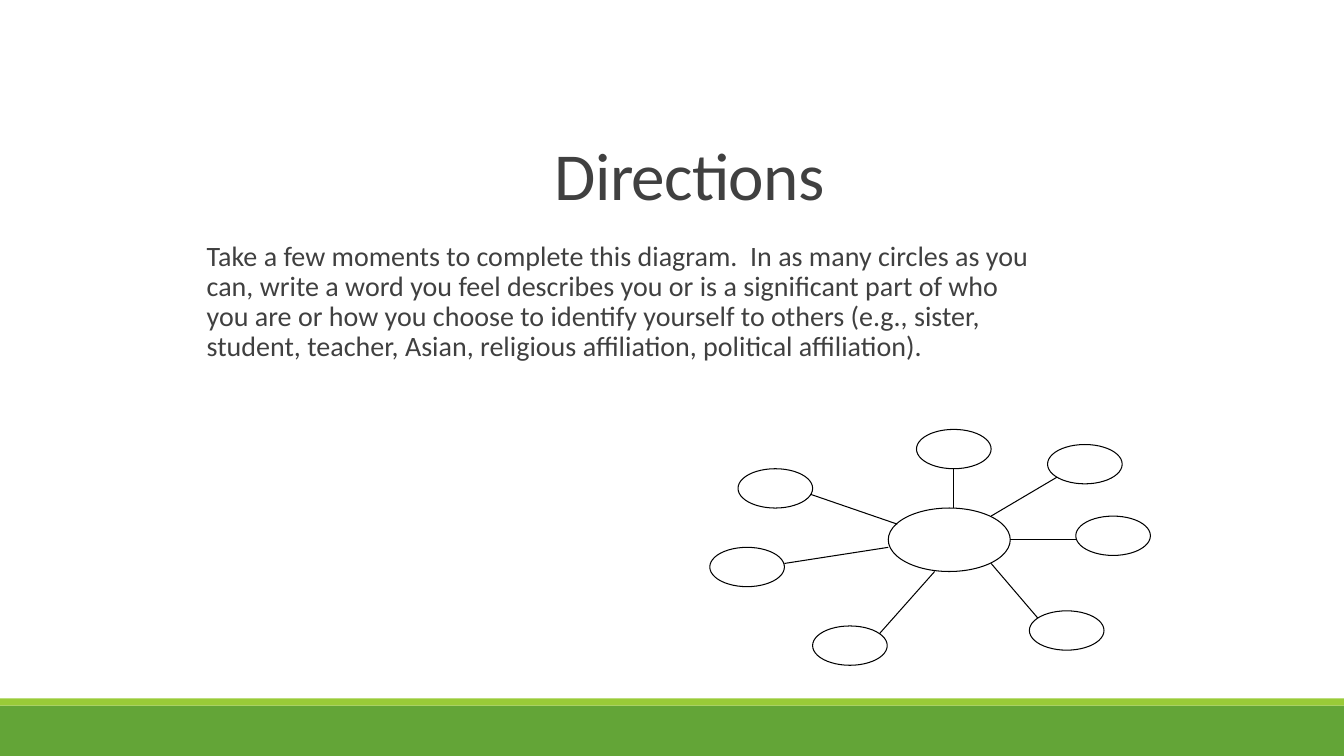
from lxml import etree
from pptx import Presentation
from pptx.dml.color import RGBColor
from pptx.enum import shapes, text
from pptx.oxml import ns
from pptx.util import Inches, Pt

WHITE = RGBColor(0xFF, 0xFF, 0xFF)
BLACK = RGBColor(0x00, 0x00, 0x00)
GRAY = RGBColor(0x40, 0x40, 0x40)
GREEN = RGBColor(0x63, 0xA5, 0x37)
LIME = RGBColor(0x99, 0xCB, 0x38)

HEADING = "Directions"
INSTRUCTIONS = (
    "Take a few moments to complete this diagram.  In as many circles as you can, "
    "write a word you feel describes you or is a significant part of who you are or "
    "how you choose to identify yourself to others (e.g., sister, student, teacher, "
    "Asian, religious affiliation, political affiliation)."
)
BANDS = [((0, 7, 13.33, 0.5), GREEN), ((0, 6.93, 13.33, 0.07), LIME)]
HUB = (8.81, 5.04, 1.21, 0.63)
CIRCLE_SIZE = (0.74, 0.39)
SPOKES = [
    {"circle": (7.32, 4.65), "start": (8.9, 5.2), "end": (7.97, 4.88)},
    {"circle": (9.09, 4.26), "start": (9.46, 5.04), "end": (9.46, 4.57)},
    {"circle": (10.39, 4.41), "start": (9.83, 5.12), "end": (10.49, 4.73)},
    {"circle": (10.67, 5.12), "start": (10.02, 5.35), "end": (10.67, 5.35)},
    {"circle": (10.21, 6.06), "start": (9.83, 5.59), "end": (10.3, 6.14)},
    {"circle": (8.06, 6.21), "start": (9.27, 5.67), "end": (8.72, 6.29)},
    {"circle": (7.04, 5.43), "start": (8.81, 5.43), "end": (7.78, 5.59)},
]


def add_filled(slide, preset, box, fill, outline=None):
    """Add a flat preset shape with an optional thin outline."""
    shape = slide.shapes.add_shape(preset, *map(Inches, box))
    shape.shadow.inherit = False
    shape.fill.solid()
    shape.fill.fore_color.rgb = fill
    if outline is None:
        shape.line.fill.background()
    else:
        shape.line.color.rgb = outline
        shape.line.width = Pt(0.75)


def add_spoke(slide, start, end):
    """Add a thin straight line between two points."""
    spoke = slide.shapes.add_connector(
        shapes.MSO_CONNECTOR.STRAIGHT, *map(Inches, start + end))
    spoke.line.color.rgb = BLACK
    spoke.line.width = Pt(0.75)
    etree.SubElement(spoke._element.spPr, ns.qn("a:effectLst"))


def fill_placeholder(placeholder, box, words, size, anchor, align, spacing):
    """Place a placeholder, write its words and return the paragraph and run."""
    placeholder.left, placeholder.top, placeholder.width, placeholder.height = map(Inches, box)
    frame = placeholder.text_frame
    frame.word_wrap = True
    frame.auto_size = text.MSO_AUTO_SIZE.NONE
    frame.vertical_anchor = anchor
    paragraph = frame.paragraphs[0]
    paragraph.alignment = align
    paragraph.line_spacing = spacing
    run = paragraph.add_run()
    run.text = words
    run.font.size = Pt(size)
    run.font.name = "Calibri"
    run.font.color.rgb = GRAY
    return paragraph, run


def main():
    """Build the directions slide and save it."""
    deck = Presentation()
    deck.slide_width, deck.slide_height = Inches(13.33), Inches(7.5)
    slide = deck.slides.add_slide(deck.slide_layouts[1])
    heading, instructions = slide.placeholders

    for box, color in BANDS:
        add_filled(slide, shapes.MSO_SHAPE.RECTANGLE, box, color)

    _, heading_run = fill_placeholder(
        heading, (3.61, 1.05, 6.46, 1.13), HEADING, 48,
        text.MSO_ANCHOR.BOTTOM, text.PP_ALIGN.CENTER, 0.85)
    heading_run.font._element.set("spc", "-50")

    paragraph, _ = fill_placeholder(
        instructions, (1.95, 2.35, 8.41, 2.09), INSTRUCTIONS, 20,
        text.MSO_ANCHOR.TOP, text.PP_ALIGN.LEFT, 0.9)
    instructions.text_frame.margin_left = instructions.text_frame.margin_right = 0
    paragraph.space_before, paragraph.space_after = Pt(12), Pt(2)
    properties = paragraph._p.get_or_add_pPr()
    properties.set("marL", str(Inches(0.1)))
    properties.set("indent", "0")
    etree.SubElement(properties, ns.qn("a:buNone"))

    add_filled(slide, shapes.MSO_SHAPE.OVAL, HUB, WHITE, BLACK)
    for spoke in SPOKES:
        add_spoke(slide, spoke["start"], spoke["end"])
        add_filled(slide, shapes.MSO_SHAPE.OVAL, spoke["circle"] + CIRCLE_SIZE, WHITE, BLACK)

    deck.save("out.pptx")


if __name__ == "__main__":
    main()
